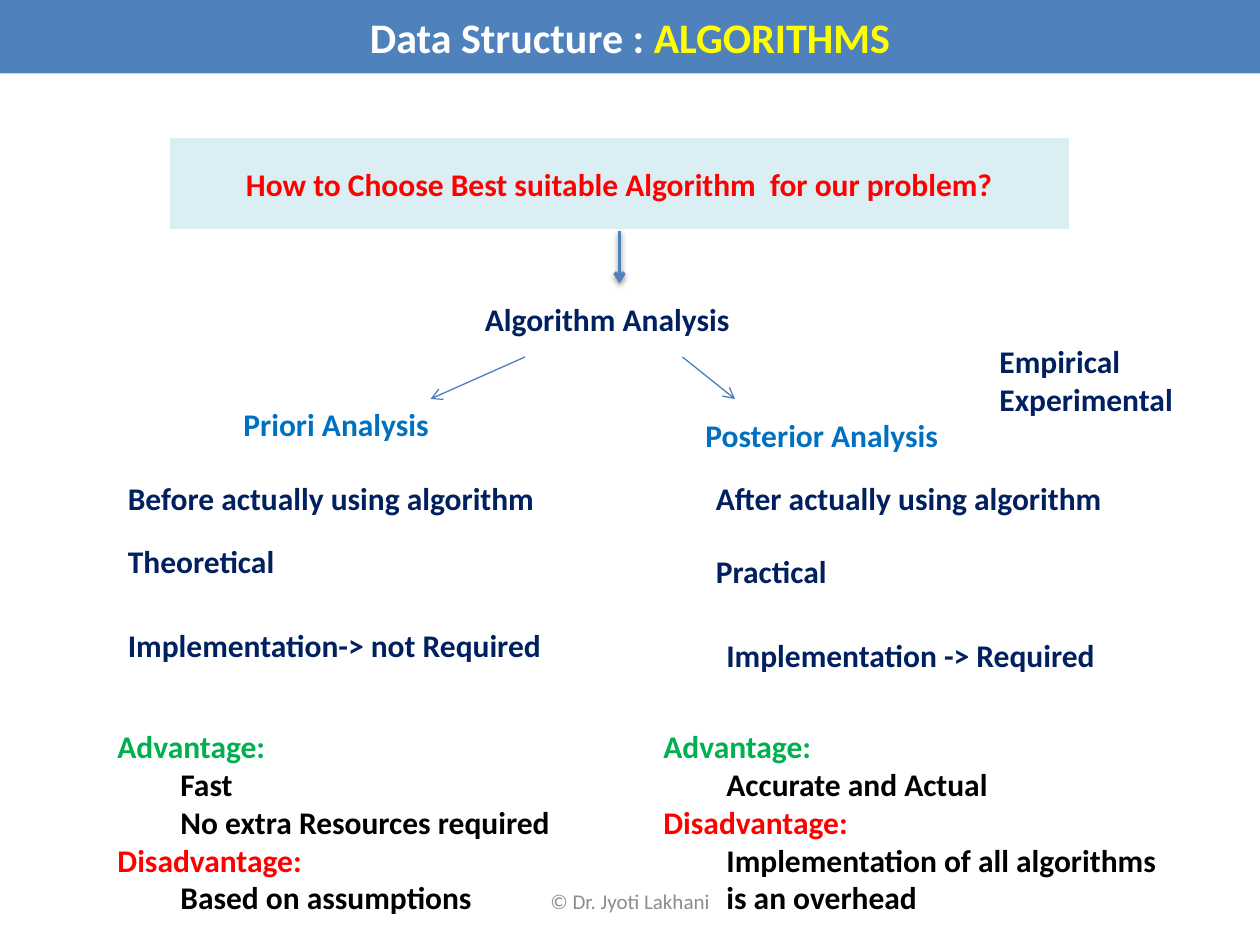
from lxml.etree import SubElement
from pptx import Presentation
from pptx.dml.color import RGBColor
from pptx.enum.shapes import MSO_CONNECTOR, MSO_SHAPE
from pptx.enum.text import MSO_ANCHOR, MSO_AUTO_SIZE, PP_ALIGN
from pptx.oxml.ns import qn
from pptx.util import Pt

BLUE, NAVY, SKY = "4F81BD", "002060", "0070C0"
GREEN, RED, BLACK, WHITE = "00B050", "FF0000", "000000", "FFFFFF"
INDENT = 36

# text, left, top, width, colour
LABELS = [
    ("Algorithm Analysis", 270, 168, 155.5, NAVY),
    ("Priori Analysis", 132, 228, 121, SKY),
    ("Posterior Analysis", 396, 234, 152.5, SKY),
    ("Before actually using algorithm", 66, 270, 248.5, NAVY),
    ("After actually using algorithm", 402, 270, 237, NAVY),
    ("Theoretical", 66, 306, 98.5, NAVY),
    ("Practical", 402, 312, 78.5, NAVY),
    ("Implementation-> not Required", 66, 354, 252.5, NAVY),
    ("Implementation -> Required", 408, 360, 227, NAVY),
]
# text, colour, left indent
PRIORI = [
    ("Advantage:", GREEN, 0),
    ("Fast", BLACK, INDENT),
    ("No extra Resources required", BLACK, INDENT),
    ("Disadvantage:", RED, 0),
    ("Based on assumptions", BLACK, INDENT),
]
POSTERIOR = [
    ("Advantage:", GREEN, 0),
    ("Accurate and Actual", BLACK, INDENT),
    ("Disadvantage:", RED, 0),
    ("Implementation of all algorithms is an overhead", BLACK, INDENT),
]


def rgb(value):
    return RGBColor.from_string(value)


def add_run(p, text, color, **formats):
    r = p.add_run()
    r.text = text
    values = {"name": "Calibri", "size": Pt(18), "bold": True} | formats
    for key, value in values.items():
        setattr(r.font, key, value)
    r.font.color.rgb = rgb(color)


def add_bar(s, box, fill, runs, size, line=None):
    sp = s.shapes.add_shape(MSO_SHAPE.RECTANGLE, *map(Pt, box))
    sp.shadow.inherit = False
    sp.fill.solid()
    sp.fill.fore_color.rgb = rgb(fill)
    if line:
        sp.line.color.rgb = rgb(line)
        sp.line.width = Pt(2)
    else:
        sp.line.fill.background()
    tf = sp.text_frame
    tf.vertical_anchor = MSO_ANCHOR.MIDDLE
    p = tf.paragraphs[0]
    p.alignment = PP_ALIGN.CENTER
    for text, color in runs:
        add_run(p, text, color, size=Pt(size))


def add_text(s, box, lines, wrap=False):
    tf = s.shapes.add_textbox(*map(Pt, box)).text_frame
    tf.word_wrap = wrap
    tf.auto_size = MSO_AUTO_SIZE.SHAPE_TO_FIT_TEXT
    for i, (text, color, indent) in enumerate(lines):
        p = tf.add_paragraph() if i else tf.paragraphs[0]
        if indent:
            p._p.get_or_add_pPr().set("marL", str(Pt(indent)))
        add_run(p, text, color)


def add_arrow(s, ends, color, width, shadow=False):
    c = s.shapes.add_connector(MSO_CONNECTOR.STRAIGHT, *map(Pt, ends))
    c.line.color.rgb = rgb(color)
    c.line.width = Pt(width)
    SubElement(c.line._get_or_add_ln(), qn("a:tailEnd"), type="arrow")
    effects = SubElement(c._element.spPr, qn("a:effectLst"))
    if shadow:
        outer = SubElement(effects, qn("a:outerShdw"), blurRad=str(Pt(3.1)),
                           dist=str(Pt(1.6)), dir="5400000", rotWithShape="0")
        shade = SubElement(outer, qn("a:srgbClr"), val=BLACK)
        SubElement(shade, qn("a:alpha"), val="38000")


def add_footer(s, text):
    tf = s.shapes.add_textbox(Pt(246), Pt(500.5), Pt(228), Pt(28.75)).text_frame
    tf.word_wrap = True
    tf.vertical_anchor = MSO_ANCHOR.MIDDLE
    p = tf.paragraphs[0]
    p.alignment = PP_ALIGN.CENTER
    add_run(p, text, "8C8C8C", size=Pt(12), bold=False)


def main():
    prs = Presentation()
    prs.slide_width, prs.slide_height = Pt(720), Pt(540)
    s = prs.slides.add_slide(prs.slide_layouts[6])

    add_bar(s, (0, 0, 720, 42), BLUE,
            [("Data Structure : ", WHITE), ("ALGORITHMS", "FFFF00")], 24)
    add_bar(s, (96, 78, 516, 54), "DBEEF4",
            [("How to Choose Best suitable Algorithm  for our problem?", RED)],
            18, WHITE)

    add_arrow(s, (354, 132, 354, 162), BLUE, 2, shadow=True)
    for ends in [(300, 204, 246, 228), (390, 204, 420, 228)]:
        add_arrow(s, ends, "4B7EBC", 0.75)

    for text, left, top, width, color in LABELS:
        add_text(s, (left, top, width, 29), [(text, color, 0)])
    add_text(s, (564, 192, 114.5, 51),
             [("Empirical", NAVY, 0), ("Experimental", NAVY, 0)])
    add_text(s, (60, 412, 270, 116.5), PRIORI, wrap=True)
    add_text(s, (372, 412, 306, 116.5), POSTERIOR, wrap=True)
    add_footer(s, "© Dr. Jyoti Lakhani")

    prs.save("out.pptx")


if __name__ == "__main__":
    main()
